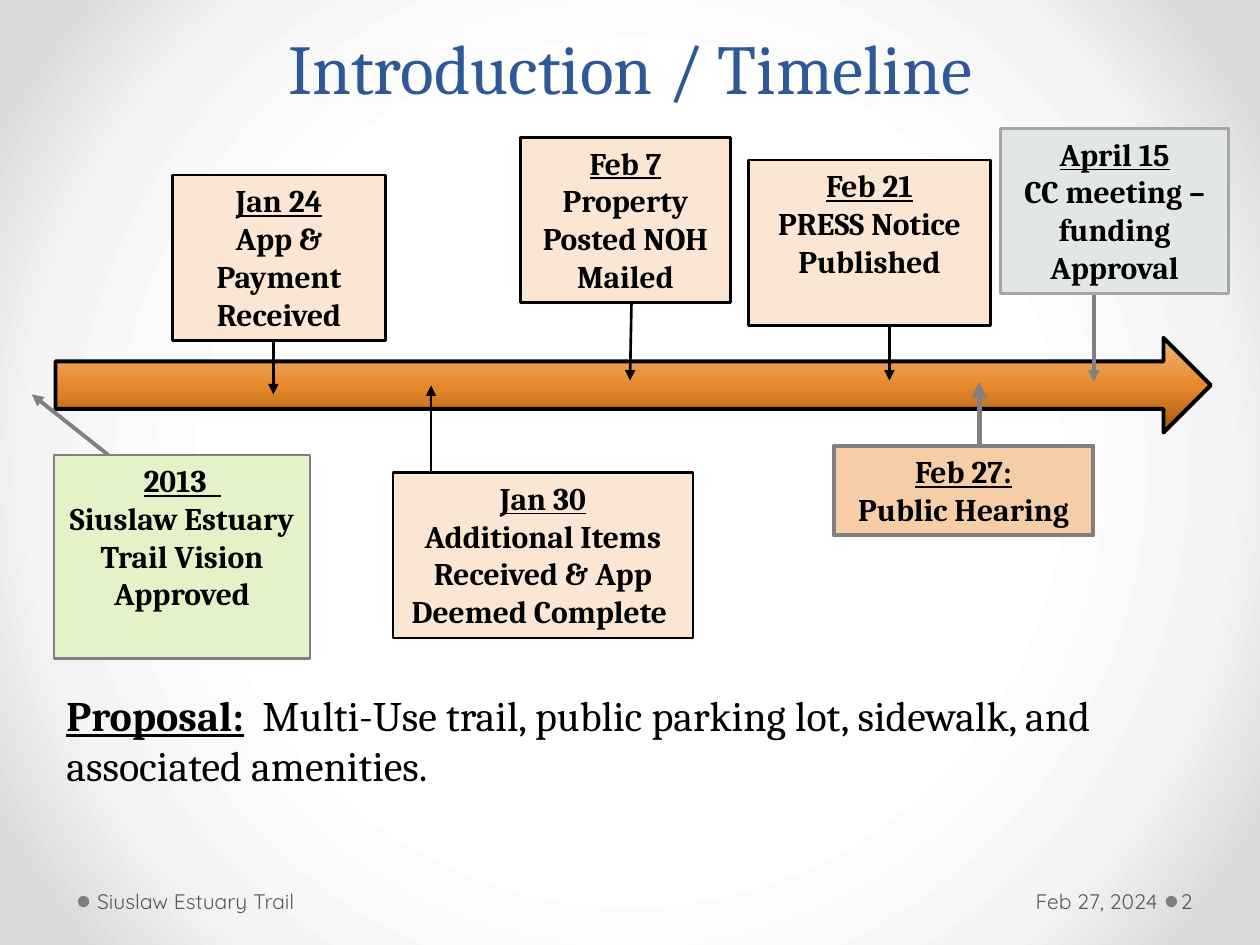
from typing import NamedTuple

import lxml.etree
import pptx
import pptx.dml.color
import pptx.enum.shapes
import pptx.enum.text
import pptx.oxml.ns
import pptx.util

Cm = pptx.util.Cm
Pt = pptx.util.Pt
qn = pptx.oxml.ns.qn
SHAPE = pptx.enum.shapes.MSO_SHAPE
ALIGN = pptx.enum.text.PP_ALIGN
ANCHOR = pptx.enum.text.MSO_ANCHOR
BLACK, GREY, FOOTER, PEACH = "000000", "808080", "595959", "FAE6D3"


class Event(NamedTuple):
    date: str
    label: str
    x: float
    y: float
    w: float
    h: float = 3.33
    fill: str = PEACH
    line: str = BLACK
    weight: float = 1.5


class Pointer(NamedTuple):
    x1: float
    y1: float
    x2: float
    y2: float
    color: str = BLACK
    weight: float = 1.5


EARLY_EVENTS = [
    Event("Feb 21", "PRESS Notice Published", 15.09, 3.23, 4.88),
    Event("Feb 27:", "Public Hearing", 16.81, 8.99, 5.23, 1.8, "F5CEA7", GREY, 2.5),
    Event("Feb 7", "Property Posted NOH Mailed", 10.49, 2.77, 4.24),
    Event("Jan 24", "App & Payment Received", 3.48, 3.53, 4.29),
]
LATE_EVENTS = [
    Event("April 15", "CC meeting – funding Approval", 20.17, 2.59, 4.6,
          fill="E3E6E7", line="A6A6A6"),
    Event("Jan 30", "Additional Items Received & App Deemed Complete ", 7.92, 9.53, 6.05),
    Event("2013  ", "Siuslaw Estuary Trail Vision Approved", 1.09, 9.17, 5.16, 4.11,
          "E3F2C7", GREY),
]
POINTERS = [
    Pointer(5.51, 6.88, 5.51, 7.95),
    Pointer(2.18, 9.17, 0.64, 7.95, GREY, 2.25),
    Pointer(22.05, 5.72, 22.05, 7.7, GREY, 2.25),
    Pointer(17.93, 6.58, 17.93, 7.67),
    Pointer(12.73, 6.1, 12.7, 7.67),
    Pointer(8.69, 10.19, 8.69, 7.77),
    Pointer(19.74, 9.02, 19.74, 7.7, GREY, 3),
]


def rgb(color: str) -> pptx.dml.color.RGBColor:
    return pptx.dml.color.RGBColor.from_string(color)


def write(p, text: str, *, size: float, font: str = "Cambria", color: str = BLACK,
          bold: bool = False, underline: bool = False, align=ALIGN.LEFT):
    p.alignment = align
    r = p.add_run()
    r.text = text
    f = r.font
    f.name, f.size, f.bold, f.underline = font, Pt(size), bold, underline
    f.color.rgb = rgb(color)


def add_text(s, x: float, y: float, w: float, h: float, anchor=ANCHOR.TOP,
             left: float = 0.25, right: float = 0.25):
    tf = s.shapes.add_textbox(Cm(x), Cm(y), Cm(w), Cm(h)).text_frame
    tf.word_wrap, tf.vertical_anchor = True, anchor
    tf.margin_left, tf.margin_right = Cm(left), Cm(right)
    return tf.paragraphs[0]


def add_shape(s, kind, x: float, y: float, w: float, h: float, fill: str,
              line: str = "", weight: float = 0):
    sp = s.shapes.add_shape(kind, Cm(x), Cm(y), Cm(w), Cm(h))
    sp.shadow.inherit = False
    sp.fill.solid()
    sp.fill.fore_color.rgb = rgb(fill)
    if line:
        sp.line.color.rgb = rgb(line)
        sp.line.width = Pt(weight)
    else:
        sp.line.fill.background()
    return sp


def set_gradient(fill, root, stops: list[tuple[int, str]]):
    fill.gradient()
    grad = next(root.iter(qn("a:gradFill")))
    for child in list(grad):
        grad.remove(child)
    gs_list = lxml.etree.SubElement(grad, qn("a:gsLst"))
    for pos, color in stops:
        gs = lxml.etree.SubElement(gs_list, qn("a:gs"), pos=str(pos * 1000))
        lxml.etree.SubElement(gs, qn("a:srgbClr"), val=color)
    return grad


def add_event(s, e: Event):
    sp = add_shape(s, SHAPE.RECTANGLE, e.x, e.y, e.w, e.h, e.fill, e.line, e.weight)
    tf = sp.text_frame
    tf.word_wrap, tf.vertical_anchor = True, ANCHOR.TOP
    write(tf.paragraphs[0], e.date, size=18, bold=True, underline=True, align=ALIGN.CENTER)
    write(tf.add_paragraph(), e.label, size=18, bold=True, align=ALIGN.CENTER)


def add_pointer(s, a: Pointer):
    c = s.shapes.add_connector(pptx.enum.shapes.MSO_CONNECTOR.STRAIGHT,
                               Cm(a.x1), Cm(a.y1), Cm(a.x2), Cm(a.y2))
    c.line.color.rgb = rgb(a.color)
    c.line.width = Pt(a.weight)
    lxml.etree.SubElement(c.line._get_or_add_ln(), qn("a:tailEnd"), type="triangle")
    lxml.etree.SubElement(c._element.spPr, qn("a:effectLst"))


def main():
    prs = pptx.Presentation()
    prs.slide_width, prs.slide_height = Cm(25.4), Cm(19.05)
    s = prs.slides.add_slide(prs.slide_layouts[6])

    grad = set_gradient(s.background.fill, s._element,
                        [(50, "FFFFFF"), (76, "F4F4F4"), (92, "DADADA")])
    circle = lxml.etree.SubElement(grad, qn("a:path"), path="circle")
    lxml.etree.SubElement(circle, qn("a:fillToRect"),
                          {side: "50000" for side in "ltrb"})

    for x in (23.5, 1.57):
        add_shape(s, SHAPE.OVAL, x, 18.06, 0.23, 0.23, GREY)

    p = add_text(s, 1.27, 0, 22.86, 2.31, ANCHOR.BOTTOM)
    p.line_spacing = Pt(58)
    write(p, "Introduction / Timeline", size=40, color="2F5897", align=ALIGN.CENTER)

    for text, x, w, left, right, align in (
        ("2", 23.72, 1.55, 0.08, 0.13, ALIGN.LEFT),
        ("Feb 27, 2024", 17.68, 5.79, 0.25, 0.13, ALIGN.RIGHT),
        ("Siuslaw Estuary Trail", 1.83, 7.9, 0.13, 0.25, ALIGN.LEFT),
    ):
        p = add_text(s, x, 17.65, w, 1.02, ANCHOR.MIDDLE, left, right)
        write(p, text, size=12, font="Quicksand", color=FOOTER, align=align)

    p = add_text(s, 1.09, 13.77, 22.38, 2.31)
    write(p, "Proposal:", size=24, bold=True, underline=True)
    write(p, "  Multi-Use trail, public parking lot, sidewalk, and associated amenities.",
          size=24)

    for event in EARLY_EVENTS:
        add_event(s, event)

    arrow = add_shape(s, SHAPE.RIGHT_ARROW, 1.12, 6.81, 23.29, 1.91, "E78829", BLACK, 2.25)
    grad = set_gradient(arrow.fill, arrow._element,
                        [(0, "9F5812"), (48, "E78829"), (100, "F0B57A")])
    lxml.etree.SubElement(grad, qn("a:lin"), ang=str(270 * 60000), scaled="0")

    for pointer in POINTERS:
        add_pointer(s, pointer)
    for event in LATE_EVENTS:
        add_event(s, event)

    prs.save("out.pptx")


if __name__ == "__main__":
    main()
